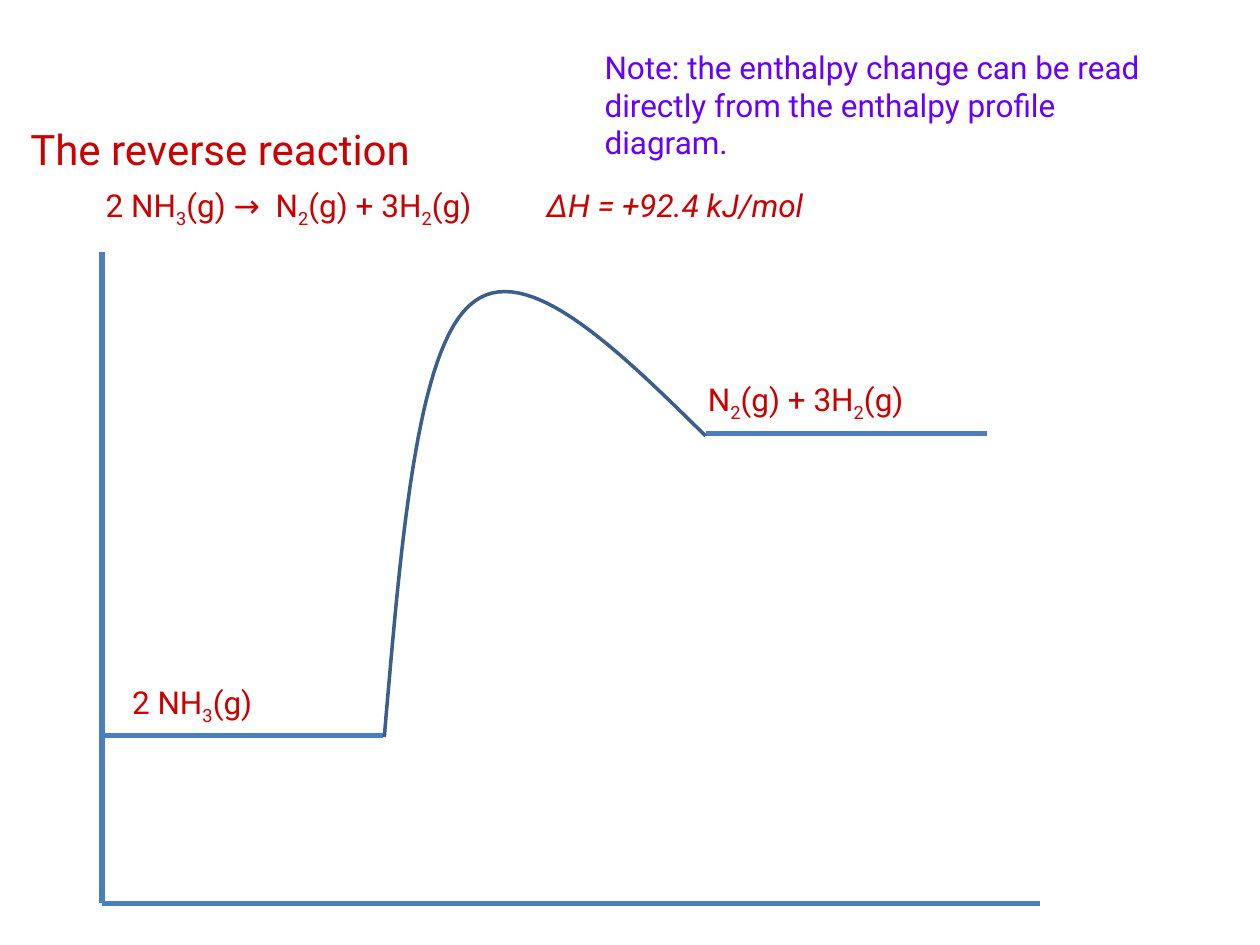
from lxml.etree import SubElement
from pptx import Presentation
from pptx.dml.color import RGBColor
from pptx.enum.shapes import MSO_CONNECTOR
from pptx.enum.text import MSO_ANCHOR, MSO_AUTO_SIZE, PP_ALIGN
from pptx.oxml.ns import qn
from pptx.util import Inches, Pt

COLORS = {"red": "CC0000", "violet": "6600FF", "axis": "4B7EBC", "curve": "3A5F8C"}
FONT = "Roboto"

# A run is (text, style); style is "", "sub" or "italic"
AMMONIA = [("2 NH", ""), ("3", "sub"), ("(g)", "")]
ELEMENTS = [("N", ""), ("2", "sub"), ("(g) + 3H", ""), ("2", "sub"), ("(g)", "")]
EQUATION = [*AMMONIA, (" →  ", ""), *ELEMENTS, ("\t\t", ""), ("∆H = +92.4 kJ/mol", "italic")]

# Energy diagram geometry
AXIS_X, AXIS_TOP, AXIS_Y, AXIS_RIGHT = 0.81, 2, 7.17, 8.25
LEVEL_WIDTH = 2.23
REACTANT_Y, PRODUCT_X, PRODUCT_Y = 5.84, 5.6, 3.44
CURVE = [
    [(3.05, 5.85), (3.18, 4.34), (3.3, 2.82), (3.72, 2.43)],
    [(3.72, 2.43), (4.14, 2.03), (4.87, 2.74), (5.6, 3.46)],
]
CURVE_STEPS = 30


def color(name):
    return RGBColor.from_string(COLORS[name])


def write_text(shape, runs, color_name="red", size=18):
    text_frame = shape.text_frame
    text_frame.word_wrap = True
    text_frame.auto_size = MSO_AUTO_SIZE.NONE
    text_frame.vertical_anchor = MSO_ANCHOR.TOP
    paragraph = text_frame.paragraphs[0]
    paragraph.alignment = PP_ALIGN.LEFT
    for text, style in runs:
        run = paragraph.add_run()
        run.text = text
        run.font.name = FONT
        run.font.size = Pt(size)
        run.font.color.rgb = color(color_name)
        if style == "italic":
            run.font.italic = True
        elif style == "sub":
            run.font._element.set("baseline", "-25000")


def add_text(slide, left, top, width, height, runs, color_name="red"):
    box = slide.shapes.add_textbox(Inches(left), Inches(top), Inches(width), Inches(height))
    write_text(box, runs, color_name)


def add_title(slide, text):
    title = slide.shapes.title
    title.left, title.top = Inches(0.14), Inches(0.93)
    title.width, title.height = Inches(8.42), Inches(0.5)
    write_text(title, [(text, "")], size=24)


def add_line(slide, x1, y1, x2, y2):
    line = slide.shapes.add_connector(
        MSO_CONNECTOR.STRAIGHT, Inches(x1), Inches(y1), Inches(x2), Inches(y2))
    line.line.color.rgb = color("axis")
    line.line.width = Pt(3)
    SubElement(line._element.spPr, qn("a:effectLst"))


def bezier_point(controls, t):
    weights = ((1 - t) ** 3, 3 * t * (1 - t) ** 2, 3 * t ** 2 * (1 - t), t ** 3)
    return tuple(Inches(sum(w * point[axis] for w, point in zip(weights, controls)))
                 for axis in (0, 1))


def add_curve(slide, segments):
    points = [bezier_point(segment, step / CURVE_STEPS)
              for segment in segments for step in range(1, CURVE_STEPS + 1)]
    builder = slide.shapes.build_freeform(*bezier_point(segments[0], 0))
    builder.add_line_segments(points, close=False)
    curve = builder.convert_to_shape()
    curve.shadow.inherit = False
    curve.fill.background()
    curve.line.color.rgb = color("curve")
    curve.line.width = Pt(2)


def main():
    presentation = Presentation()
    presentation.slide_width, presentation.slide_height = Inches(10), Inches(7.5)
    slide = presentation.slides.add_slide(presentation.slide_layouts[5])

    # Heading, equation and note
    add_title(slide, "The reverse reaction")
    add_text(slide, 0.74, 1.43, 8.69, 0.4, EQUATION)
    note = "Note: the enthalpy change can be read directly from the enthalpy profile diagram."
    add_text(slide, 4.7, 0.33, 4.56, 1.99, [(note, "")], "violet")

    # Axes
    add_line(slide, AXIS_X, AXIS_TOP, AXIS_X, AXIS_Y)
    add_line(slide, AXIS_X, AXIS_Y, AXIS_RIGHT, AXIS_Y)

    # Energy levels and the curve between them
    for x, y in ((AXIS_X, REACTANT_Y), (PRODUCT_X, PRODUCT_Y)):
        add_line(slide, x, y, x + LEVEL_WIDTH, y)
    add_curve(slide, CURVE)

    # Level labels
    add_text(slide, 0.95, 5.37, 2, 0.47, AMMONIA)
    add_text(slide, 5.52, 2.97, 2.4, 0.47, ELEMENTS)

    presentation.save("out.pptx")


if __name__ == "__main__":
    main()
